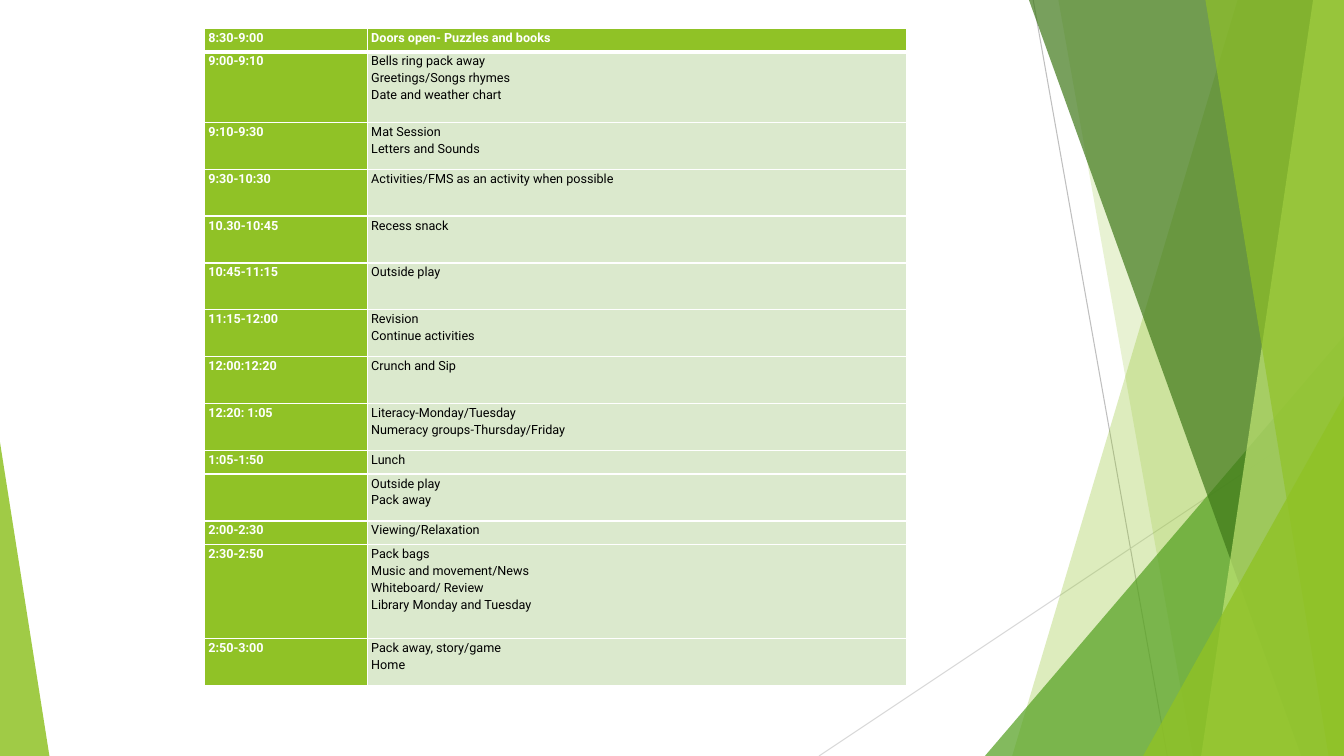
from lxml import etree
from pptx import Presentation
from pptx.dml.color import RGBColor
from pptx.enum import shapes
from pptx.oxml import ns
from pptx.util import Pt

HUES = {"lime": "90C226", "leaf": "54A021", "moss": "3F7819", "pale": "C0E474",
        "mint": "DBE9CD", "white": "FFFFFF", "black": "000000",
        "gray": "BFBFBF", "mist": "D9D9D9"}

PLAN = [
    ("8:30-9:00", ["Doors open- Puzzles and books"], 1),
    ("9:00-9:10", ["Bells ring pack away", "Greetings/Songs rhymes", "Date and weather chart"], 3),
    ("9:10-9:30", ["Mat Session", "Letters and Sounds"], 2),
    ("9:30-10:30", ["Activities/FMS as an activity when possible"], 2),
    ("10.30-10:45", ["Recess snack"], 2),
    ("10:45-11:15", ["Outside play"], 2),
    ("11:15-12:00", ["Revision", "Continue activities"], 2),
    ("12:00:12:20", ["Crunch and Sip"], 2),
    ("12:20: 1:05", ["Literacy-Monday/Tuesday", "Numeracy groups-Thursday/Friday"], 2),
    ("1:05-1:50", ["Lunch"], 1),
    ("", ["Outside play", "Pack away"], 2),
    ("2:00-2:30", ["Viewing/Relaxation"], 1),
    ("2:30-2:50", ["Pack bags", "Music and movement/News", "Whiteboard/ Review",
                   "Library Monday and Tuesday"], 4),
    ("2:50-3:00", ["Pack away, story/game", "Home"], 2),
]


def rgb(hue):
    """Return the named colour."""
    return RGBColor.from_string(HUES[hue])


def apply(item, form):
    """Set each format value on the item."""
    for key, val in form.items():
        setattr(item, key, val)


def node(root, tag, **atts):
    """Append a DrawingML element."""
    return etree.SubElement(root, ns.qn("a:" + tag), atts)


def tint(shape, hue, alpha):
    """Fill a shape with a see-through colour and no outline."""
    shape.shadow.inherit = False
    shape.fill.solid()
    shape.fill.fore_color.rgb = rgb(hue)
    shape.line.fill.background()
    color = shape.fill._xPr.find(ns.qn("a:solidFill"))[0]
    node(color, "alpha", val=str(alpha * 1000))


def ray(slide, start, end, hue):
    """Draw a thin straight line."""
    line = slide.shapes.add_connector(shapes.MSO_CONNECTOR.STRAIGHT,
                                      *map(Pt, start + end))
    line.line.color.rgb = rgb(hue)
    line.line.width = Pt(0.75)
    node(line._element.spPr, "effectLst")


def wedge(slide, box, top, foot, hue, alpha):
    """Fill from a slanted edge to the right side of the box."""
    x, y, w, h = box
    spots = [(x + top, y), (x + w, y), (x + w, y + h), (x + foot, y + h)]
    spots = [(Pt(a), Pt(b)) for a, b in spots]
    pen = slide.shapes.build_freeform(*spots[0], scale=1.0)
    pen.add_line_segments(spots[1:], close=True)
    tint(pen.convert_to_shape(), hue, alpha)


def peak(slide, box, apex, hue, alpha):
    """Draw a triangle whose apex stands at one side."""
    shape = slide.shapes.add_shape(shapes.MSO_SHAPE.ISOSCELES_TRIANGLE, *map(Pt, box))
    shape.adjustments[0] = apex
    tint(shape, hue, alpha)


def facets(slide, box):
    """Layer the green facets in the right-hand box."""
    x, y, w, h = box

    def corner(left, top, alpha, hue):
        """Place a triangle in the bottom right corner."""
        peak(slide, (x + left, y + top, w - left, h - top), 1, hue, alpha)

    ray(slide, (x + 153, y), (x + 248.8, y + h), "gray")
    ray(slide, (x + w, y + 290), (x, y + h), "mist")
    wedge(slide, box, 299, 138, "lime", 30)
    wedge(slide, box, 171, 267, "lime", 20)
    corner(118.5, 240, 72, "leaf")
    wedge(slide, box, 150, 344.5, "moss", 70)
    wedge(slide, box, 353, 273, "pale", 70)
    wedge(slide, box, 276, 364, "lime", 65)
    corner(231.5, 283, 80, "lime")


def frame(cell, sizes):
    """Give a cell white borders, in the order left, right, top, bottom."""
    prop = cell._tc.get_or_add_tcPr()
    for spot, (side, size) in enumerate(zip("LRTB", sizes)):
        edge = node(prop, "ln" + side, w=str(Pt(size)))
        node(node(edge, "solidFill"), "srgbClr", val=HUES["white"])
        prop.insert(spot, edge)


def write(cell, lines, fill, hue, bold):
    """Fill a cell and set its lines of text."""
    apply(cell, {"margin_left": Pt(2.5), "margin_right": Pt(2.5),
                 "margin_top": 0, "margin_bottom": 0})
    cell.fill.solid()
    cell.fill.fore_color.rgb = rgb(fill)
    cell.text = "\n".join(lines)
    for para in cell.text_frame.paragraphs:
        para.line_spacing = 1.15
        for run in para.runs:
            apply(run.font, {"name": "Roboto", "size": Pt(9), "bold": bold})
            run.font.color.rgb = rgb(hue)


def agenda(slide, box):
    """Build the timetable, its rows sized in equal units."""
    x, y, w, h = box
    table = slide.shapes.add_table(len(PLAN), 2, *map(Pt, box)).table
    for col, part in zip(table.columns, (116.4, w - 116.4)):
        col.width = Pt(part)
    unit = h / sum(size for _, _, size in PLAN)
    for i, (time, tasks, size) in enumerate(PLAN):
        table.rows[i].height = Pt(size * unit)
        head = ("lime", "white", True)
        body = ("mint", "black", False) if i else head
        for j, (lines, look) in enumerate((([time], head), (tasks, body))):
            cell = table.cell(i, j)
            write(cell, lines, *look)
            frame(cell, (1, 1, 3 if i == 1 else 1, 3 if i == 0 else 1))


def main():
    """Build and save the slide."""
    deck = Presentation()
    apply(deck, {"slide_width": Pt(960), "slide_height": Pt(540)})
    slide = deck.slides.add_slide(deck.slide_layouts[6])
    facets(slide, (585, 0, 375, 540))
    peak(slide, (0, 316, 35.3, 224), 0, "lime", 85)
    agenda(slide, (146.3, 20.3, 501.2, 469.4))
    deck.save("out.pptx")


if __name__ == "__main__":
    main()
